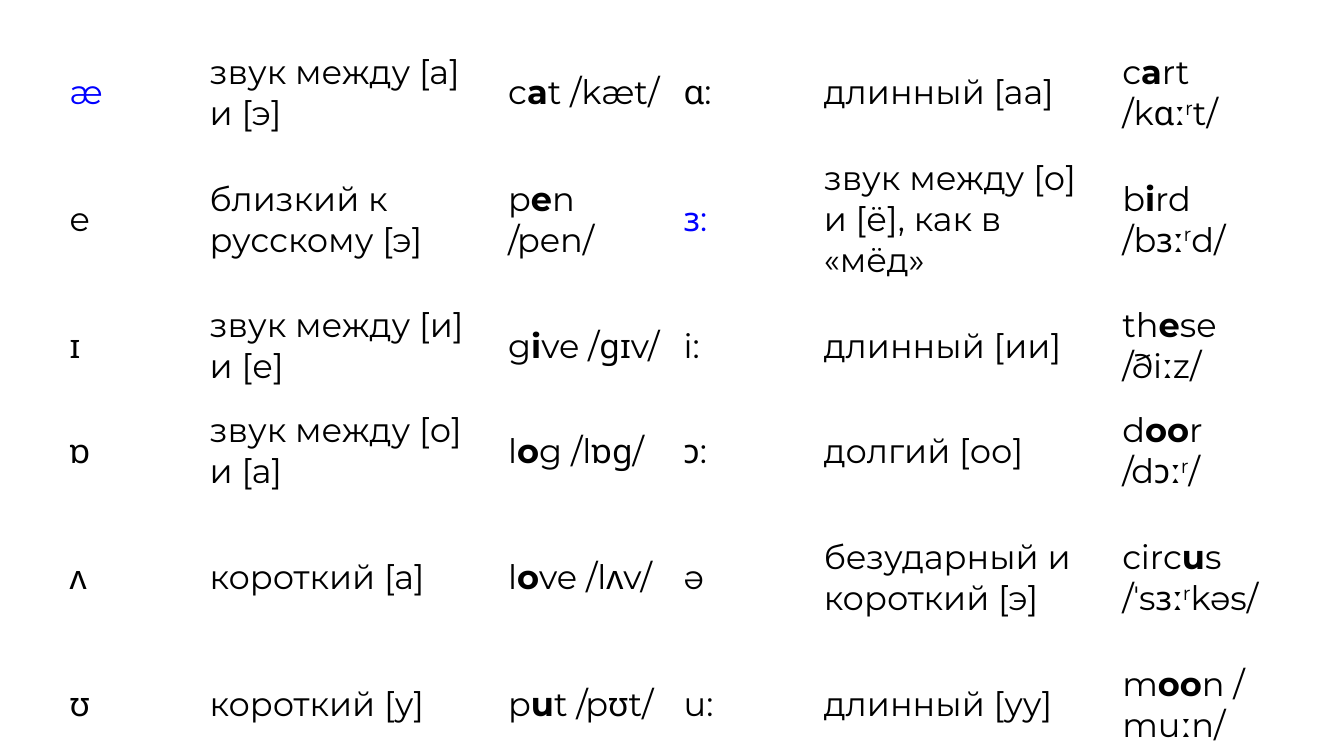
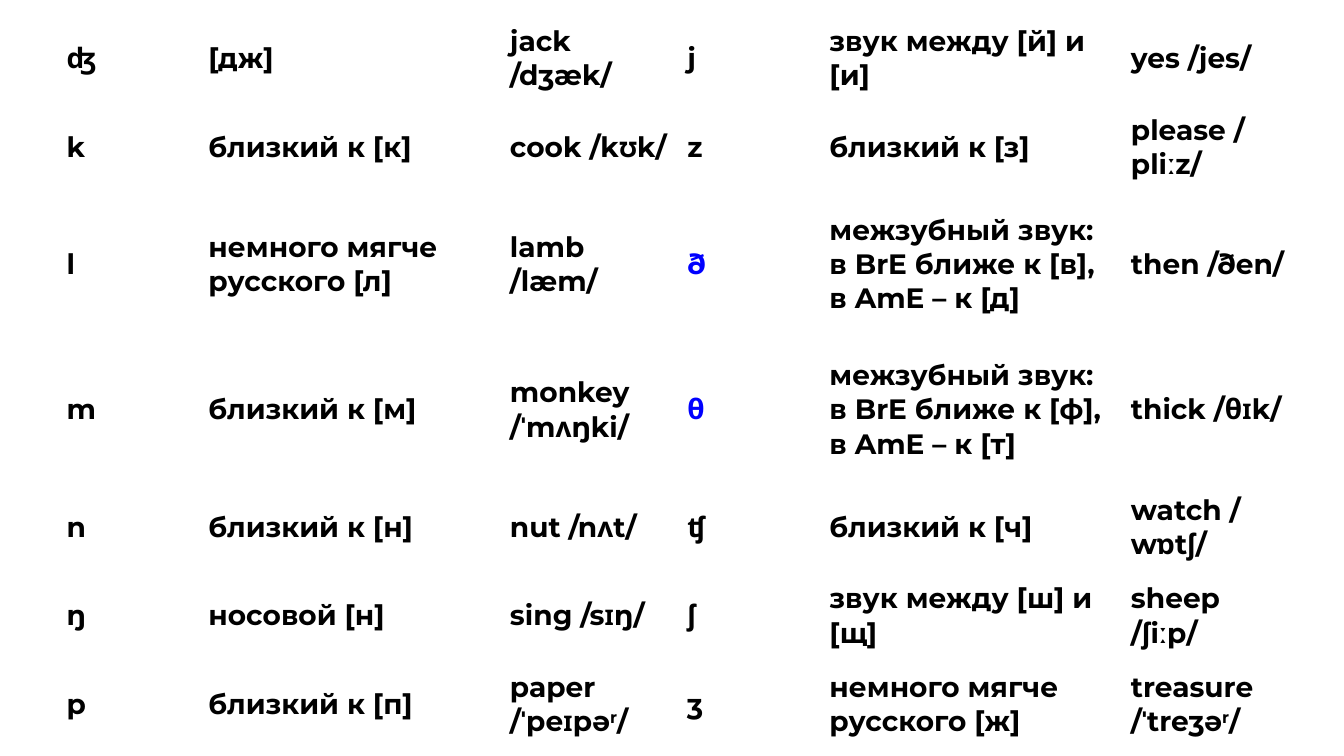
import pptx
import pptx.dml.color
import pptx.enum.text
import pptx.util

Pt = pptx.util.Pt

VOWELS = [
    ("æ", "звук между [а] и [э]", "c|*a|t /kæt/", "ɑ:", "длинный [аа]", "c|*a|rt /kɑː|^r|t/"),
    ("e", "близкий к русскому [э]", "p|*e|n /pen/",
     "ɜ:", "звук между [о] и [ё], как в «мёд»", "b|*i|rd /bɜː|^r|d/"),
    ("ɪ", "звук между [и] и [е]", "g|*i|ve /ɡɪv/", "i:", "длинный [ии]", "th|*e|se /ðiːz/"),
    ("ɒ", "звук между [о] и [а]", "l|*o|g /lɒɡ/", "ɔ:", "долгий [оо]", "d|*oo|r /dɔː|^r|/"),
    ("ʌ", "короткий [а]", "l|*o|ve /lʌv/",
     "ə", "безударный и короткий [э]", "circ|*u|s\n/ˈsɜː|^r|kəs/"),
    ("ʊ", "короткий [у]", "p|*u|t /pʊt/", "u:", "длинный [уу]", "m|*oo|n~/muːn/"),
]
CONSONANTS = [
    ("ʤ", "[дж]", "jack /dʒæk/", "j", "звук между [й] и [и]", "yes /jes/"),
    ("k", "близкий к [к]", "cook /kʊk/", "z", "близкий к [з]", "please~/pliːz/"),
    ("l", "немного мягче русского [л]", "lamb /læm/",
     "ð", "межзубный звук: в BrE ближе к [в], в AmE – к [д]", "then /ðen/"),
    ("m", "близкий к [м]", "monkey\n/ˈmʌŋki/",
     "θ", "межзубный звук: в BrE ближе к [ф], в AmE – к [т]", "thick /θɪk/"),
    ("n", "близкий к [н]", "nut /nʌt/", "ʧ", "близкий к [ч]", "watch~/wɒtʃ/"),
    ("ŋ", "носовой [н]", "sing~/sɪŋ/", "ʃ", "звук между [ш] и [щ]", "sheep /ʃiːp/"),
    ("p", "близкий к [п]", "paper\n/ˈpeɪpə|^r|/",
     "ʒ", "немного мягче русского [ж]", "treasure\n/ˈtreʒə|^r|/"),
]


class Deck:
    """Sound tables; in cell text | splits runs, * is bold, ^ superscript, ~ a no-break space."""

    FONT, INK, ACCENT, PAPER = "Montserrat", "000000", "0000FF", "FFFFFF"
    HARD_SOUNDS = {"æ", "ɜ:", "ð", "θ"}

    def __init__(self):
        self.prs = pptx.Presentation()
        self.prs.slide_width, self.prs.slide_height = Pt(960), Pt(540)
        self.s = None

    def color(self, value):
        return pptx.dml.color.RGBColor.from_string(value)

    def slide(self):
        self.s = self.prs.slides.add_slide(self.prs.slide_layouts[6])
        self.s.background.fill.solid()
        self.s.background.fill.fore_color.rgb = self.color(self.PAPER)

    def run(self, p, text, size, bold, hue, raised):
        r = p.add_run()
        r.text = text
        r.font.name, r.font.size, r.font.bold = self.FONT, Pt(size), bold
        r.font.color.rgb = self.color(hue)
        if raised:
            r._r.get_or_add_rPr().set("baseline", "30000")

    def cell(self, cell, text, size, bold, inset):
        cell.fill.solid()
        cell.fill.fore_color.rgb = self.color(self.PAPER)
        cell.vertical_anchor = pptx.enum.text.MSO_ANCHOR.MIDDLE
        cell.margin_left = cell.margin_right = Pt(7.2)
        cell.margin_top = cell.margin_bottom = Pt(inset)
        hue = self.ACCENT if text in self.HARD_SOUNDS else self.INK
        p = cell.text_frame.paragraphs[0]
        for piece in text.replace("~", chr(160)).split("|"):
            strong, raised = piece.startswith("*"), piece.startswith("^")
            for i, line in enumerate(piece.lstrip("*^").split("\n")):
                if i:
                    p.add_line_break()
                self.run(p, line, size, bold or strong, hue, raised)

    def table(self, rows, left, top, widths, heights, size, bold, inset):
        widths = widths * 2
        table = self.s.shapes.add_table(len(rows), len(widths), Pt(left), Pt(top),
                                        Pt(sum(widths)), Pt(sum(heights))).table
        table.first_row = table.horz_banding = False
        for column, width in zip(table.columns, widths):
            column.width = Pt(width)
        for row, height, texts in zip(table.rows, heights, rows):
            row.height = Pt(height)
            for cell, text in zip(row.cells, texts):
                self.cell(cell, text, size, bold, inset)


def main():
    deck = Deck()
    deck.slide()
    deck.table(VOWELS, 42.5, 28.8, [100.1, 213.2, 125.4],
               [75, 106, 75, 75, 106, 75], size=24, bold=False, inset=3.6)
    deck.slide()
    deck.table(CONSONANTS, 40.3, 10, [101.4, 215.4, 126.8],
               [60, 60, 104, 104, 60, 60, 60], size=20, bold=True, inset=7.2)
    deck.prs.save("out.pptx")


if __name__ == "__main__":
    main()
